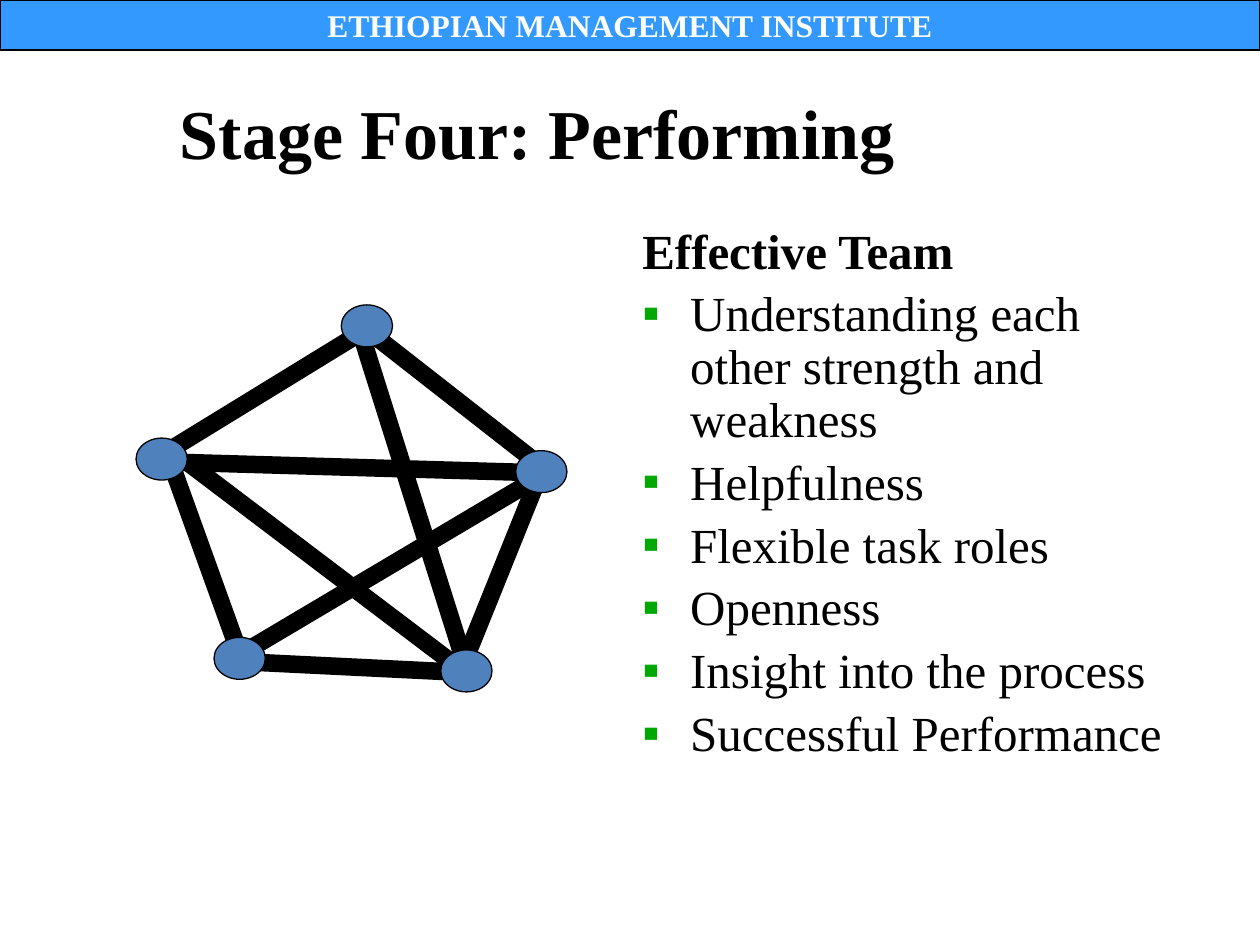
from lxml.etree import SubElement as Sub
from pptx import Presentation
from pptx.dml.color import RGBColor as Rgb
from pptx.enum.shapes import MSO_CONNECTOR as Link, MSO_SHAPE as Kind
from pptx.enum.text import MSO_ANCHOR as Anchor, PP_ALIGN as Align
from pptx.oxml.ns import qn
from pptx.util import Inches, Pt

WIDE, HIGH = Inches(10), Inches(7.5)
INK = {"bar": "3399FF", "node": "4F81BD", "mark": "00A800",
       "text": "000000", "line": "000000", "white": "FFFFFF"}
FONT = "Times New Roman"

POINTS = ["Understanding each other strength and weakness", "Helpfulness",
          "Flexible task roles", "Openness", "Insight into the process",
          "Successful Performance"]

# Team web, in columns and rows of its own grid
COLS, ROWS = 42, 37
NODE = (5, 4)
NODES = [(20, 0), (37, 13.9), (29.7, 32.9), (7.6, 31.7), (0, 12.7)]
TIES = [((4, 15), (39, 16)), ((5, 15), (32, 35)), ((9, 34), (40, 16)),
        ((22, 3), (32, 34)), ((3, 14), (10, 33)), ((10, 34), (31, 35)),
        ((32, 34), (39, 17)), ((3, 14), (23, 2)), ((22, 2), (39, 15))]


def share(x, y, w, h):
    """Turn shares of the slide's size into a box."""
    return int(x * WIDE), int(y * HIGH), int(w * WIDE), int(h * HIGH)


def tint(name):
    return Rgb.from_string(INK[name])


def write(para, text, size, color="text", bold=False):
    run = para.add_run()
    run.text = text
    font = run.font
    font.name, font.size, font.bold = FONT, Pt(size), bold
    font.color.rgb = tint(color)


def draw(slide, kind, box, fill):
    shape = slide.shapes.add_shape(kind, *box)
    shape.shadow.inherit = False
    shape.fill.solid()
    shape.fill.fore_color.rgb = tint(fill)
    shape.line.color.rgb = tint("line")
    shape.line.width = Pt(0.75)
    return shape


def frame(slide, box):
    text = slide.shapes.add_textbox(*box).text_frame
    text.word_wrap = True
    return text


def banner(slide, box):
    text = draw(slide, Kind.RECTANGLE, box, "bar").text_frame
    text.vertical_anchor = Anchor.MIDDLE
    para = text.paragraphs[0]
    para.alignment = Align.CENTER
    write(para, "ETHIOPIAN MANAGEMENT INSTITUTE", 18, "white", True)


def title(slide, box):
    text = frame(slide, box)
    text.vertical_anchor = Anchor.MIDDLE
    write(text.paragraphs[0], "Stage Four: Performing", 40, bold=True)


def bullet(para):
    props = para._p.get_or_add_pPr()
    props.set("marL", str(Inches(0.38)))
    props.set("indent", str(-Inches(0.38)))
    color = Sub(props, qn("a:buClr"))
    Sub(color, qn("a:srgbClr"), val=INK["mark"])
    Sub(props, qn("a:buFont"), typeface=FONT)
    Sub(props, qn("a:buChar"), char="▪")


def traits(slide, box):
    text = frame(slide, box)
    head = text.paragraphs[0]
    head.line_spacing = 0.9
    write(head, "Effective Team", 28, bold=True)
    for point in POINTS:
        para = text.add_paragraph()
        bullet(para)
        para.line_spacing = 0.9
        para.space_before = Pt(5.6)
        write(para, point, 28)


def web(slide, box):
    """Draw the team as nodes tied to one another."""
    left, top, wide, high = box
    col, row = wide / COLS, high / ROWS

    def spot(x, y):
        return int(left + x * col), int(top + y * row)

    for start, end in TIES:
        tie = slide.shapes.add_connector(Link.STRAIGHT, *spot(*start), *spot(*end))
        tie.line.color.rgb = tint("line")
        tie.line.width = Pt(10)
        Sub(tie._element.spPr, qn("a:effectLst"))
    size = int(NODE[0] * col), int(NODE[1] * row)
    for node in NODES:
        draw(slide, Kind.OVAL, (*spot(*node), *size), "node")


def main():
    deck = Presentation()
    deck.slide_width, deck.slide_height = WIDE, HIGH
    slide = deck.slides.add_slide(deck.slide_layouts[6])
    banner(slide, share(0, 0, 1, 0.053))
    title(slide, (Inches(1.33), Inches(0.58), Inches(8.67), Inches(0.92)))
    traits(slide, (Inches(5), Inches(1.75), Inches(4.5), Inches(4.92)))
    web(slide, (Inches(1.08), Inches(2.42), Inches(3.42), Inches(3.08)))
    deck.save("out.pptx")


if __name__ == "__main__":
    main()
